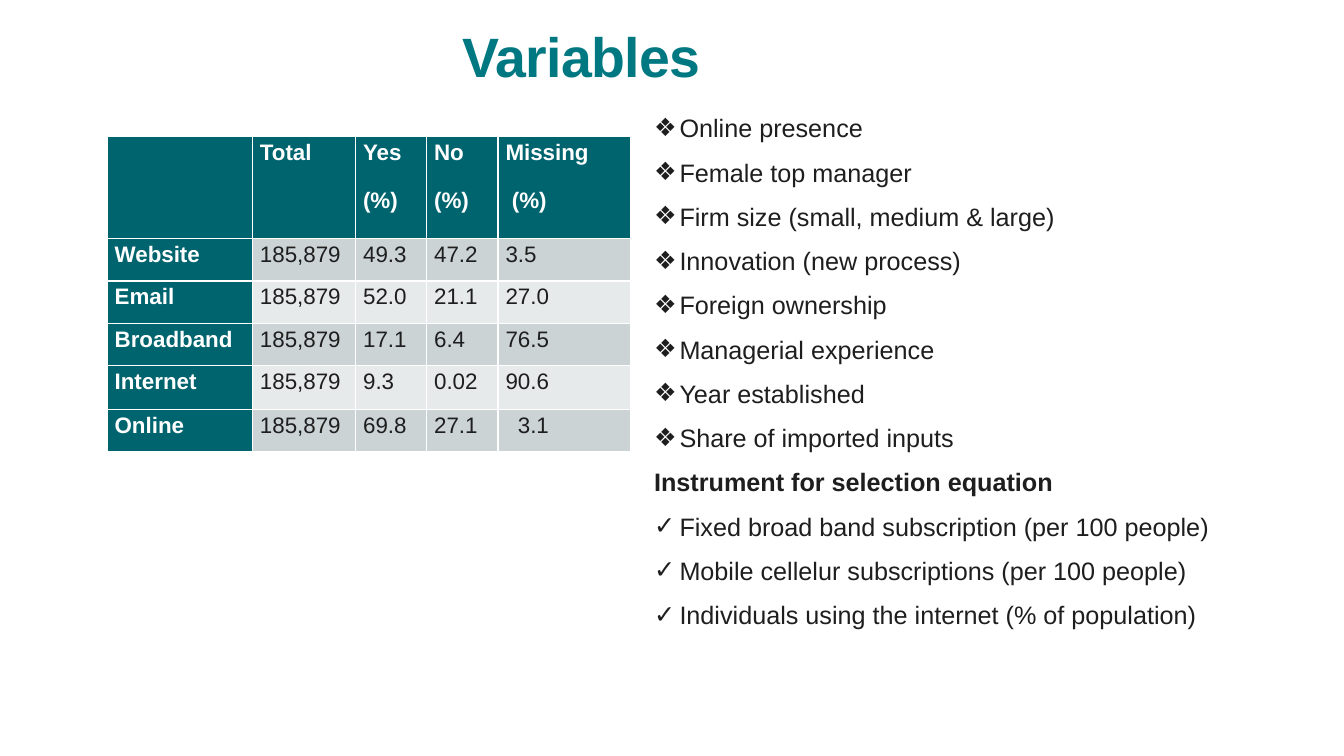
from lxml.etree import SubElement
from pptx import Presentation
from pptx.dml.color import RGBColor
from pptx.enum.text import MSO_ANCHOR, MSO_AUTO_SIZE, PP_ALIGN
from pptx.oxml.ns import qn
from pptx.util import Cm, Pt

HUES = {
    "title": "007882",
    "head": "00646E",
    "dark": "CCD3D5",
    "light": "E7EAEB",
    "ink": "1E1E1E",
    "white": "FFFFFF",
}


def hue(name):
    return RGBColor.from_string(HUES[name])


def add_run(para, text, size, tint, bold=False):
    run = para.add_run()
    run.text = text
    run.font.name = "Arial"
    run.font.size = Pt(size)
    run.font.bold = bold
    run.font.color.rgb = hue(tint)
    return run


deck = Presentation()
deck.slide_width, deck.slide_height = Cm(33.87), Cm(19.05)
slide = deck.slides.add_slide(deck.slide_layouts[1])
title, body = slide.placeholders

title.left, title.top, title.width, title.height = Cm(11.66), Cm(0.61), Cm(8.1), Cm(1.47)
frame = title.text_frame
frame.auto_size = MSO_AUTO_SIZE.NONE
frame.vertical_anchor = MSO_ANCHOR.TOP
frame.margin_left = 0
para = frame.paragraphs[0]
para.alignment = PP_ALIGN.LEFT
para.line_spacing = 0.9
run = add_run(para, "Variables", 39.6, "title", True)
run.font._element.set("spc", "-50")

rows = [
    [[""], ["Total"], ["Yes", "(%)"], ["No", "(%)"], ["Missing", "(%)"]],
    [["Website"], ["185,879"], ["49.3"], ["47.2"], ["3.5"]],
    [["Email"], ["185,879"], ["52.0"], ["21.1"], ["27.0"]],
    [["Broadband"], ["185,879"], ["17.1"], ["6.4"], ["76.5"]],
    [["Internet"], ["185,879"], ["9.3"], ["0.02"], ["90.6"]],
    [["Online"], ["185,879"], ["69.8"], ["27.1"], ["3.1"]],
]
wides = [3.66, 2.6, 1.79, 1.8, 3.35]
talls = [2.57, 1.07, 1.07, 1.07, 1.1, 1.07]
pads = {(0, 4, 1): 0.16, (5, 4, 0): 0.31}

grid = slide.shapes.add_table(
    len(rows), len(wides), Cm(2.7), Cm(3.44), Cm(sum(wides)), Cm(sum(talls))
).table
grid.first_col = True
for col, wide in zip(grid.columns, wides):
    col.width = Cm(wide)
for r, (row, tall) in enumerate(zip(rows, talls)):
    grid.rows[r].height = Cm(tall)
    for c, lines in enumerate(row):
        cell = grid.cell(r, c)
        head = r == 0 or c == 0
        cell.fill.solid()
        cell.fill.fore_color.rgb = hue("head" if head else "dark" if r % 2 else "light")
        cell.margin_left = cell.margin_right = Cm(0.19)
        cell.margin_top = cell.margin_bottom = 0
        frame = cell.text_frame
        for n, text in enumerate(lines):
            para = frame.add_paragraph() if n else frame.paragraphs[0]
            para.line_spacing = 1.15
            para.space_before = Pt(6 if n else 0)
            para.space_after = Pt(8)
            if (r, c, n) in pads:
                para._p.get_or_add_pPr().set("marL", str(Cm(pads[r, c, n])))
            if text:
                add_run(para, text, 16, "white" if head else "ink", head)

items = [
    ("❖", "Online presence"),
    ("❖", "Female top manager"),
    ("❖", "Firm size (small, medium & large)"),
    ("❖", "Innovation (new process)"),
    ("❖", "Foreign ownership"),
    ("❖", "Managerial experience"),
    ("❖", "Year established"),
    ("❖", "Share of imported inputs"),
    ("", "Instrument for selection equation"),
    ("✓", "Fixed broad band subscription (per 100 people)"),
    ("✓", "Mobile cellelur subscriptions (per 100 people)"),
    ("✓", "Individuals using the internet (% of population)"),
]
body.left, body.top, body.width, body.height = Cm(16.23), Cm(2.57), Cm(15.42), Cm(14.55)
frame = body.text_frame
frame.auto_size = MSO_AUTO_SIZE.NONE
frame.vertical_anchor = MSO_ANCHOR.TOP
for n, (mark, text) in enumerate(items):
    para = frame.add_paragraph() if n else frame.paragraphs[0]
    para.line_spacing = Pt(25.6)
    para.space_before = Pt(6 if n else 0)
    props = para._p.get_or_add_pPr()
    dent = Cm(0.64) if mark else 0
    props.set("marL", str(dent))
    props.set("indent", str(-dent))
    if mark:
        SubElement(props, qn("a:buChar")).set("char", mark)
    else:
        SubElement(props, qn("a:buNone"))
    add_run(para, text, 18, "ink", not mark)

deck.save("out.pptx")
